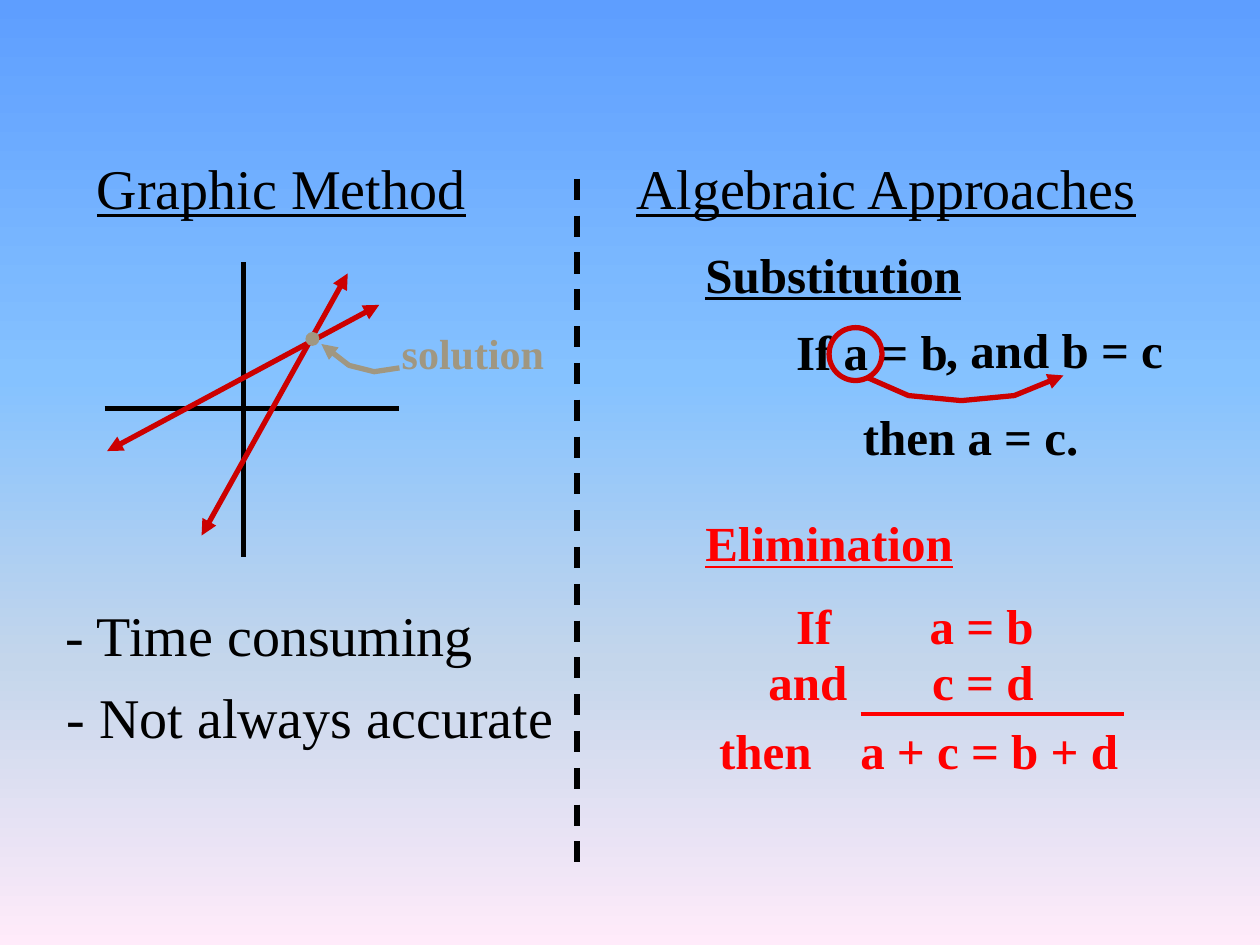
from pptx import Presentation
from pptx.dml.color import RGBColor as RGB
from pptx.enum.dml import MSO_LINE as Dash
from pptx.enum.shapes import MSO_CONNECTOR as Conn, MSO_SHAPE as Kind
from pptx.enum.text import MSO_AUTO_SIZE as Auto
from pptx.oxml.ns import qn
from pptx.oxml.xmlchemy import OxmlElement as Node
from pptx.util import Inches, Pt

BLACK, RED, DARK, TAN = "000000", "FF0000", "CC0000", "A09781"


def tint(code):
    return RGB.from_string(code)


def add(top, tag, **attrs):
    node = Node(tag)
    for key, val in attrs.items():
        node.set(key, str(val))
    top.append(node)
    return node


class Board:
    """Draw styled parts on a slide of 100 columns by 75 rows."""

    font = "Times New Roman"
    cell = Inches(0.1)

    def __init__(self, deck):
        deck.slide_width, deck.slide_height = self.at(100, 75)
        self.slide = deck.slides.add_slide(deck.slide_layouts[6])
        self.shapes = self.slide.shapes

    def at(self, *cells):
        return [round(n * self.cell) for n in cells]

    def sky(self, stops):
        fill = self.slide.background.fill
        fill.gradient()
        fill.gradient_angle = 270
        ramp = self.slide.element.find(".//" + qn("a:gsLst"))
        for old in list(ramp):
            ramp.remove(old)
        for share, code in stops:
            stop = add(ramp, "a:gs", pos=share * 1000)
            add(stop, "a:srgbClr", val=code)

    def text(self, box, words, size=28, color=BLACK, bold=True, under=False, tab=None):
        frame = self.shapes.add_textbox(*self.at(*box)).text_frame
        frame.word_wrap = False
        frame.auto_size = Auto.SHAPE_TO_FIT_TEXT
        para = frame.paragraphs[0]
        if tab:
            tabs = add(para._p.get_or_add_pPr(), "a:tabLst")
            add(tabs, "a:tab", pos=self.at(tab)[0], algn="l")
        run = para.add_run()
        run.text = words
        font = run.font
        font.name, font.size, font.bold = self.font, Pt(size), bold
        font.underline = under
        font.color.rgb = tint(color)

    def pen(self, line, color, width=3, ends=()):
        line.fill.solid()
        line.fill.fore_color.rgb = tint(color)
        line.width = Pt(width)
        for end in ends:
            add(line._get_or_add_ln(), f"a:{end}End", type="triangle")

    def line(self, start, stop, color=BLACK, width=3, ends=(), dash=None):
        rule = self.shapes.add_connector(Conn.STRAIGHT, *self.at(*start, *stop))
        add(rule._element.spPr, "a:effectLst")
        if dash:
            rule.line.dash_style = dash
        self.pen(rule.line, color, width, ends)

    def ring(self, mid, size, color, width=3, fill=None):
        x, y = mid
        box = self.at(x - size / 2, y - size / 2, size, size)
        ring = self.shapes.add_shape(Kind.OVAL, *box)
        ring.shadow.inherit = False
        if fill:
            ring.fill.solid()
            ring.fill.fore_color.rgb = tint(fill)
        else:
            ring.fill.background()
        self.pen(ring.line, color, width)

    def curve(self, points, color):
        first, *rest = [self.at(*p) for p in points]
        form = self.shapes.build_freeform(*first)
        form.add_line_segments(rest, close=False)
        curve = form.convert_to_shape()
        curve.shadow.inherit = False
        curve.fill.background()
        self.pen(curve.line, color, ends=["tail"])


def graph(board):
    board.line((19.3, 20.8), (19.3, 44.2))
    board.line((8.3, 32.4), (31.7, 32.4))
    for start, stop in [((8.5, 35.8), (30.1, 24.2)), ((16, 42.5), (27.6, 21.7))]:
        board.line(start, stop, DARK, ends=["head", "tail"])
    board.ring((24.8, 26.9), 1, TAN, 0.75, TAN)
    board.text((30.9, 25.5, 13.3, 5), "solution", 24, TAN)
    board.curve([(31.7, 29.2), (29.7, 29.5), (27.7, 29), (25.5, 27.3)], TAN)


def algebra(board):
    for top, wide, words, color in [
        (18.9, 22.6, "Substitution", BLACK),
        (40.2, 21.9, "Elimination", RED),
    ]:
        board.text((55, top, wide, 5.7), words, color=color, under=True)
    board.text((62.2, 25, 14.2, 5.7), "If a = b")
    board.text((74.1, 24.9, 19.4, 5.7), ", and b = c")
    board.ring((67.9, 28.1), 4.2, DARK)
    board.curve([(68.9, 30), (72.1, 31.4), (76.3, 31.8), (80.5, 31.4), (84.4, 29.8)], DARK)
    board.text((67.5, 31.8, 19.2, 5.7), "then a = c.")
    for left, top, wide, words, tab in [
        (62.2, 46.8, 20.9, "If\ta = b", 10.6),
        (60, 51.2, 23.2, "and\tc = d", 13),
        (56.1, 56.7, 34.7, "then\ta + c = b + d", 11.2),
    ]:
        board.text((left, top, wide, 5.7), words, color=RED, tab=tab)
    board.line((68.3, 56.7), (89.2, 56.7), RED, 2.25)


def main():
    deck = Presentation()
    board = Board(deck)
    board.sky([(0, "5E9EFF"), (40, "85C2FF"), (70, "C4D6EB"), (100, "FFEBFA")])
    for left, top, wide, words, under in [
        (6.7, 11.7, 31.3, "Graphic Method", True),
        (49.5, 11.7, 41.9, "Algebraic Approaches", True),
        (4.2, 47.2, 34.6, "- Time consuming", False),
        (4.3, 53.7, 40.7, "- Not always accurate", False),
    ]:
        board.text((left, top, wide, 6.3), words, 32, bold=False, under=under)
    graph(board)
    board.line((45.8, 14.2), (45.8, 69.2), dash=Dash.DASH)
    algebra(board)
    deck.save("out.pptx")


if __name__ == "__main__":
    main()
